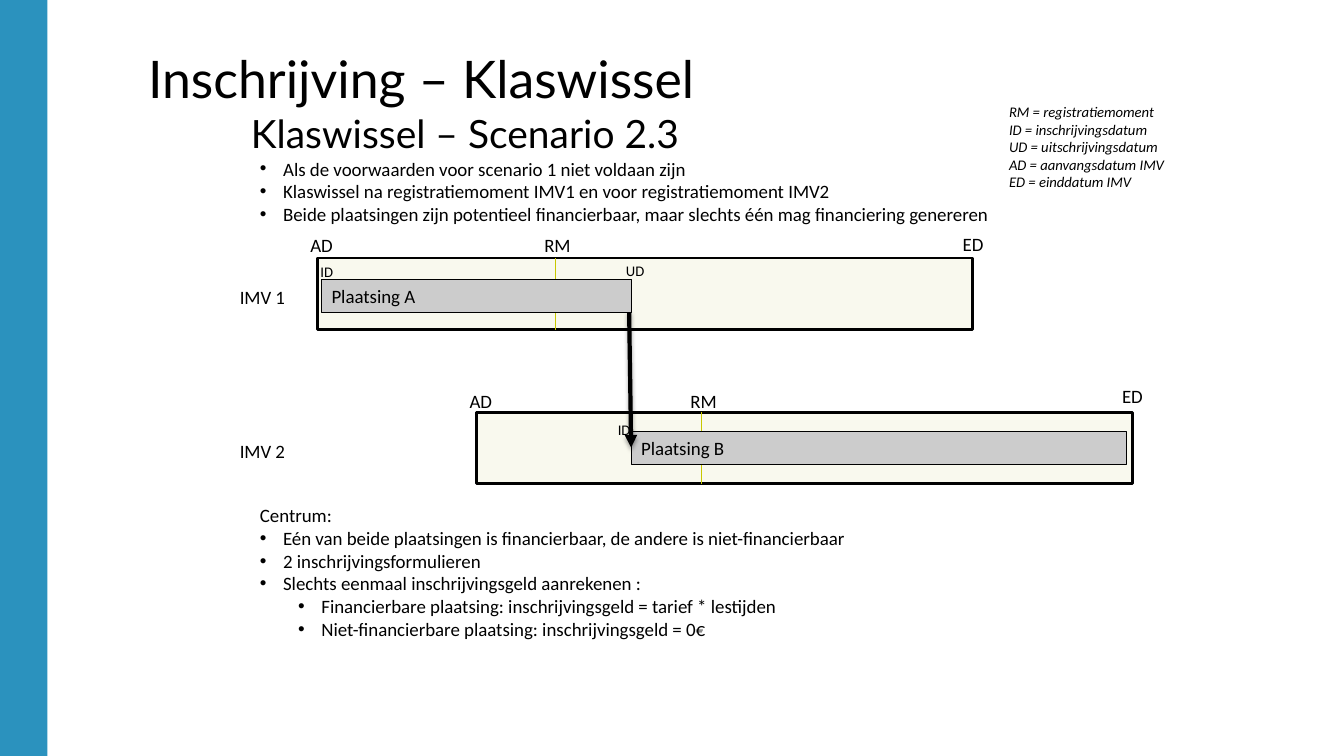
from lxml import etree
from pptx import Presentation
from pptx.dml.color import RGBColor
from pptx.enum.shapes import MSO_CONNECTOR, MSO_SHAPE
from pptx.enum.text import MSO_ANCHOR, MSO_AUTO_SIZE, PP_ALIGN
from pptx.oxml.ns import qn
from pptx.util import Inches, Pt

RECT = MSO_SHAPE.RECTANGLE
STRAIGHT = MSO_CONNECTOR.STRAIGHT
TOP = MSO_ANCHOR.TOP
LEFT = PP_ALIGN.LEFT
GROW = MSO_AUTO_SIZE.SHAPE_TO_FIT_TEXT

THEME = {
    "ink": "000000", "band": "2B92BE", "lane": "F9F9EE",
    "bar": "CCCCCC", "moment": "C8C800",
    "title": 37, "sub": 27.8, "body": 13.5, "small": 10.5,
    "head_font": "Lato", "body_font": "Calibri",
}
BODY, SMALL, INK = THEME["body"], THEME["small"], THEME["ink"]

deck = Presentation()
deck.slide_width, deck.slide_height = Inches(13.33), Inches(7.5)
slide = deck.slides.add_slide(deck.slide_layouts[6])
shapes = slide.shapes


def add_block(at, rows=(), size=BODY, font=THEME["body_font"], fill=None,
              edge=0, wrap=True, grow=True, italic=False):
    """Filled rectangle or plain text box; rows are (text, indent) pairs."""
    place = [Inches(v) for v in at]
    if fill:
        block = shapes.add_shape(RECT, *place)
        block.shadow.inherit = False
        block.fill.solid()
        block.fill.fore_color.rgb = RGBColor.from_string(fill)
        if edge:
            block.line.color.rgb = RGBColor.from_string(INK)
            block.line.width = Pt(edge)
        else:
            block.line.fill.background()
    else:
        block = shapes.add_textbox(*place)
    if not rows:
        return
    frame = block.text_frame
    frame.word_wrap = wrap
    frame.vertical_anchor = TOP
    if grow:
        frame.auto_size = GROW
    frame.text = "\n".join(text for text, indent in rows)
    for para, (text, indent) in zip(frame.paragraphs, rows):
        para.alignment = LEFT
        run = para.runs[0].font
        run.size, run.name, run.italic = Pt(size), font, italic
        run.color.rgb = RGBColor.from_string(INK)
        if indent:
            para.level = int(indent > STEP)
            props = para._p.get_or_add_pPr()
            props.set("marL", str(Inches(indent)))
            props.set("indent", str(-Inches(STEP)))
            etree.SubElement(props, qn("a:buFont")).set("typeface", "Arial")
            etree.SubElement(props, qn("a:buChar")).set("char", "•")


def add_line(start, end, color, width):
    """Straight line; returns its outline and its empty effect list."""
    ends = [Inches(v) for v in (*start, *end)]
    line = shapes.add_connector(STRAIGHT, *ends)
    line.line.color.rgb = RGBColor.from_string(color)
    line.line.width = Pt(width)
    props = line._element.spPr
    return props.find(qn("a:ln")), etree.SubElement(props, qn("a:effectLst"))


STEP, DEEP = 0.23, 0.61

# Side band
add_block((0, 0, 0.47, 7.5), fill=THEME["band"])

# Lanes with their registration moment and date labels
LANE_W, LANE_H = 6.5, 0.71
lanes = [
    ("IMV 1", 3.15, 2.56, 5.51, 2.27, 2.26),
    ("IMV 2", 4.73, 4.09, 6.96, 3.82, 3.77),
]
for name, left, top, moment, tag_y, end_y in lanes:
    add_block((left, top, LANE_W, LANE_H), fill=THEME["lane"], edge=2)
    add_line((moment, top), (moment, top + LANE_H), THEME["moment"], 0.75)
    tags = [
        ("RM", moment - 0.21, tag_y, 0.47),
        (name, 2.28, top + 0.22, 0.66),
        ("AD", left - 0.17, tag_y, 0.43),
        ("ED", left + LANE_W - 0.2, end_y, 0.41),
    ]
    for text, x, y, width in tags:
        add_block((x, y, width, 0.33), [(text, 0)], wrap=False)

# Placement bars, with the arrow between them
BAR_H = 0.33
add_block((6.26, 4.28, 4.91, BAR_H), [("Plaatsing B", 0)],
          fill=THEME["bar"], edge=0.75)
outline, effects = add_line((6.24, 3.09), (6.26, 4.44), INK, 3)
etree.SubElement(outline, qn("a:tailEnd")).set("type", "triangle")
shadow = etree.SubElement(effects, qn("a:outerShdw"), blurRad=str(Pt(3.1)),
                          dist=str(Pt(1.8)), dir="5400000", rotWithShape="0")
tint = etree.SubElement(shadow, qn("a:srgbClr"), val=INK)
etree.SubElement(tint, qn("a:alpha"), val="35000")
add_block((3.19, 2.77, 3.07, BAR_H), [("Plaatsing A", 0)],
          fill=THEME["bar"], edge=0.75)

# Enrolment dates on the bars
for text, x, y in [("UD", 6.11, 2.55), ("ID", 3.08, 2.56), ("ID", 6.03, 4.13)]:
    add_block((x, y, 0.43, 0.28), [(text, 0)], SMALL)

# Conditions
add_block((2.48, 1.51, 7.49, 0.78), [
    ("Als de voorwaarden voor scenario 1 niet voldaan zijn", STEP),
    ("Klaswissel na registratiemoment IMV1 en voor registratiemoment IMV2",
     STEP),
    ("Beide plaatsingen zijn potentieel financierbaar, maar slechts één mag "
     "financiering genereren", STEP),
])

# Legend
add_block((9.91, 0.97, 2.9, 0.98), [
    ("RM = registratiemoment", 0),
    ("ID = inschrijvingsdatum", 0),
    ("UD = uitschrijvingsdatum", 0),
    ("AD = aanvangsdatum IMV", 0),
    ("ED = einddatum IMV", 0),
], SMALL, italic=True)

# Consequences for the centre
add_block((2.48, 4.95, 7.24, 1.69), [
    ("Centrum:", 0),
    ("Eén van beide plaatsingen is financierbaar, de andere is "
     "niet-financierbaar", STEP),
    ("2 inschrijvingsformulieren", STEP),
    ("Slechts eenmaal inschrijvingsgeld aanrekenen :", STEP),
    ("Financierbare plaatsing: inschrijvingsgeld = tarief * lestijden", DEEP),
    ("Niet-financierbare plaatsing: inschrijvingsgeld = 0€", DEEP),
])

# Headings
add_block((2.39, 1.04, 8.21, 0.37), [("Klaswissel – Scenario 2.3", 0)],
          THEME["sub"], THEME["head_font"], grow=False)
add_block((1.37, 0.41, 11.36, 1.22), [("Inschrijving – Klaswissel", 0)],
          THEME["title"], THEME["head_font"], grow=False)

deck.save("out.pptx")
